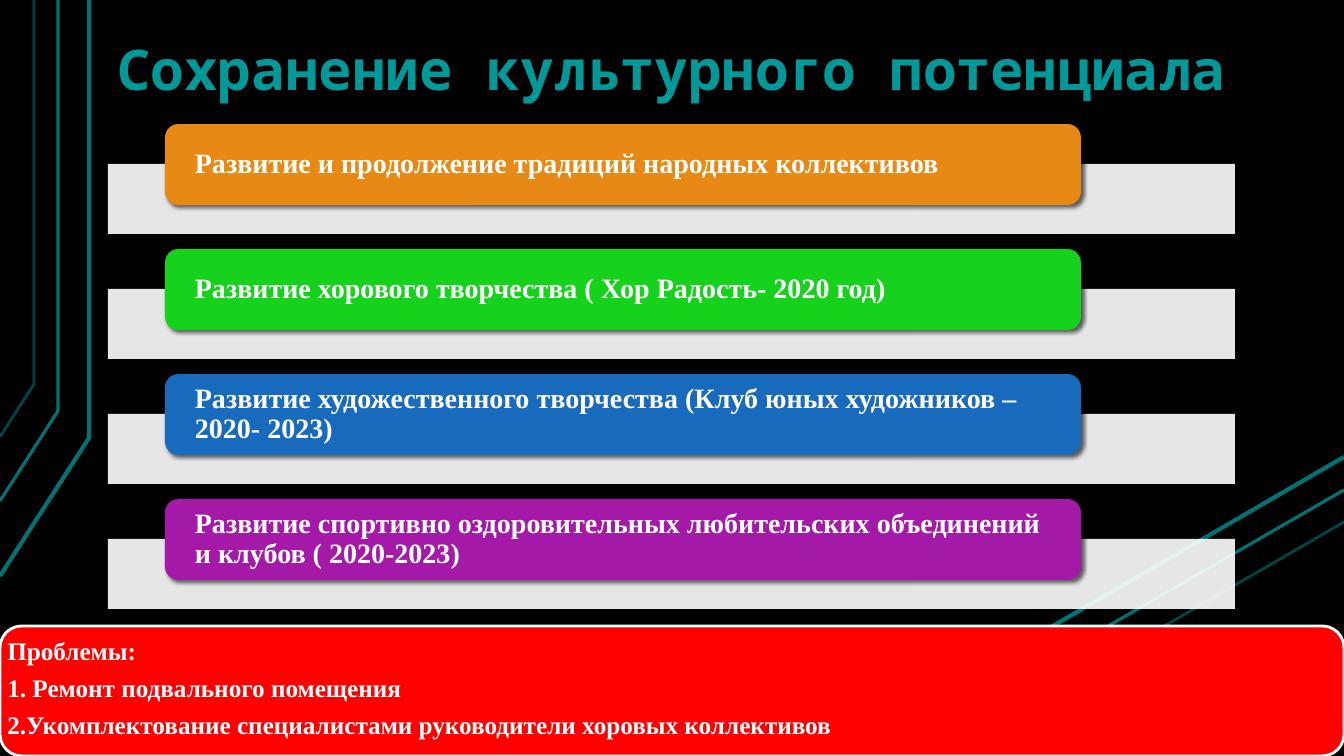
import pptx
import pptx.util
import pptx.oxml
import pptx.dml.color
import pptx.enum.shapes
import pptx.enum.text
from dataclasses import dataclass
from lxml import etree

PX = 914400 / 100.8
A = "http://schemas.openxmlformats.org/drawingml/2006/main"
SHAPES = pptx.enum.shapes.MSO_SHAPE
ANCHOR = pptx.enum.text.MSO_ANCHOR
ALIGN = pptx.enum.text.PP_ALIGN


@dataclass(frozen=True)
class Theme:
    background: str = "000000"
    line: str = "007373"
    white: str = "FFFFFF"
    title: str = "009999"
    problems: str = "FF0000"
    goals: tuple = ("E98915", "17D21C", "186ABC", "A419A7")
    title_font: str = "Noto Sans Mono"
    body_font: str = "Times New Roman"
    title_size: int = 40
    goal_size: int = 20
    problem_size: int = 18


THEME = Theme()
GOALS = (
    "Развитие и продолжение традиций народных коллективов",
    "Развитие хорового творчества ( Хор Радость- 2020 год)",
    "Развитие художественного творчества (Клуб юных художников – 2020- 2023)",
    "Развитие спортивно оздоровительных любительских объединений и клубов ( 2020-2023)",
)
PROBLEMS = (
    "Проблемы:",
    "1. Ремонт подвального помещения",
    "2.Укомплектование специалистами руководители хоровых коллективов",
)


def px(n):
    return pptx.util.Emu(round(n * PX))


def rgb(color):
    return pptx.dml.color.RGBColor.from_string(color)


def set_attrs(obj, values):
    for name, value in values.items():
        setattr(obj, name, value)


def set_alpha(sp, percent):
    """Make the only solid colour of a shape partly transparent."""
    for color in sp._element.spPr.iter(f"{{{A}}}srgbClr"):
        etree.SubElement(color, f"{{{A}}}alpha", val=str(percent * 1000))


def add_shadow(sp):
    sp._element.spPr.find(f"{{{A}}}effectLst").append(pptx.oxml.parse_xml(
        f'<a:outerShdw xmlns:a="{A}" blurRad="38100" dist="25400" dir="2700000">'
        '<a:srgbClr val="000000"><a:alpha val="60000"/></a:srgbClr></a:outerShdw>'))


def add_box(s, kind, box, color):
    sp = s.shapes.add_shape(kind, *map(px, box))
    sp.shadow.inherit = False
    sp.fill.solid()
    sp.fill.fore_color.rgb = rgb(color)
    sp.line.fill.background()
    return sp


def write(tf, lines, font, size, color, align, frame, paragraph):
    set_attrs(tf, {"word_wrap": True, **frame})
    for i, line in enumerate(lines):
        p = tf.add_paragraph() if i else tf.paragraphs[0]
        set_attrs(p, {"alignment": align, **paragraph})
        r = p.add_run()
        r.text = line
        set_attrs(r.font, {"name": font, "size": pptx.util.Pt(size), "bold": True})
        r.font.color.rgb = rgb(color)


def style_line(sp, width):
    sp.line.color.rgb = rgb(THEME.line)
    sp.line.width = pptx.util.Pt(width)
    if width == 2:
        set_alpha(sp, 60)


def add_decor(s, width, height):
    """Draw three bent lines on the left and three slanted ones on the right."""
    bends = ((89, 438, 576), (58, 411, 501), (34, 384, 437))
    slants = ((829, 457), (883, 490), (940, 522))
    for (x, bend, end), (foot, rise), weight in zip(bends, slants, (3, 2.25, 2)):
        builder = s.shapes.build_freeform(0, end, scale=PX)
        builder.add_line_segments([(x, bend), (x, 0)], close=False)
        sp = builder.convert_to_shape()
        sp.shadow.inherit = False
        sp.fill.background()
        style_line(sp, weight)
        line = s.shapes.add_connector(
            pptx.enum.shapes.MSO_CONNECTOR.STRAIGHT,
            *map(px, (foot, height, width, rise)))
        etree.SubElement(line._element.spPr, f"{{{A}}}effectLst")
        style_line(line, weight)


def add_title(s, box):
    sp = s.shapes.title
    set_attrs(sp, dict(zip(("left", "top", "width", "height"), map(px, box))))
    write(sp.text_frame, ["Сохранение культурного потенциала"], THEME.title_font,
          THEME.title_size, THEME.title, ALIGN.CENTER,
          {"vertical_anchor": ANCHOR.MIDDLE,
           "auto_size": pptx.enum.text.MSO_AUTO_SIZE.NONE}, {})


def add_goals(s, box):
    left, top, width, height = box
    gap = 15
    pitch = (height + gap) // len(GOALS)
    indent, label_width, label_height, bar_drop = 57, 916, 81, 40
    for i, (goal, color) in enumerate(zip(GOALS, THEME.goals)):
        y = top + i * pitch
        bar = add_box(s, SHAPES.RECTANGLE,
                      (left, y + bar_drop, width, pitch - gap - bar_drop), THEME.white)
        set_alpha(bar, 90)
        label = add_box(s, SHAPES.ROUNDED_RECTANGLE,
                        (left + indent, y, label_width, label_height), color)
        add_shadow(label)
        write(label.text_frame, [goal], THEME.body_font, THEME.goal_size,
              THEME.white, ALIGN.LEFT,
              {"vertical_anchor": ANCHOR.MIDDLE, "margin_left": px(26),
               "margin_right": px(26), "margin_top": 0, "margin_bottom": 0},
              {"line_spacing": 0.9})


def add_problems(s, box):
    sp = add_box(s, SHAPES.ROUNDED_RECTANGLE, box, THEME.problems)
    sp.line.color.rgb = rgb(THEME.white)
    sp.line.width = pptx.util.Pt(2)
    write(sp.text_frame, PROBLEMS, THEME.body_font, THEME.problem_size,
          THEME.white, ALIGN.LEFT,
          {"vertical_anchor": ANCHOR.TOP, "margin_left": px(1),
           "margin_right": px(1), "margin_top": px(6), "margin_bottom": 0},
          {"line_spacing": 0.9, "space_after": pptx.util.Pt(7)})


def main():
    width, height = 1344, 756
    prs = pptx.Presentation()
    set_attrs(prs, {"slide_width": px(width), "slide_height": px(height)})
    s = prs.slides.add_slide(prs.slide_layouts[5])
    s.background.fill.solid()
    s.background.fill.fore_color.rgb = rgb(THEME.background)
    add_decor(s, width, height)
    add_title(s, (76, 29, 1190, 78))
    add_goals(s, (108, 124, 1127, 485))
    add_problems(s, (0, 626, width, 130))
    prs.save("out.pptx")


if __name__ == "__main__":
    main()
